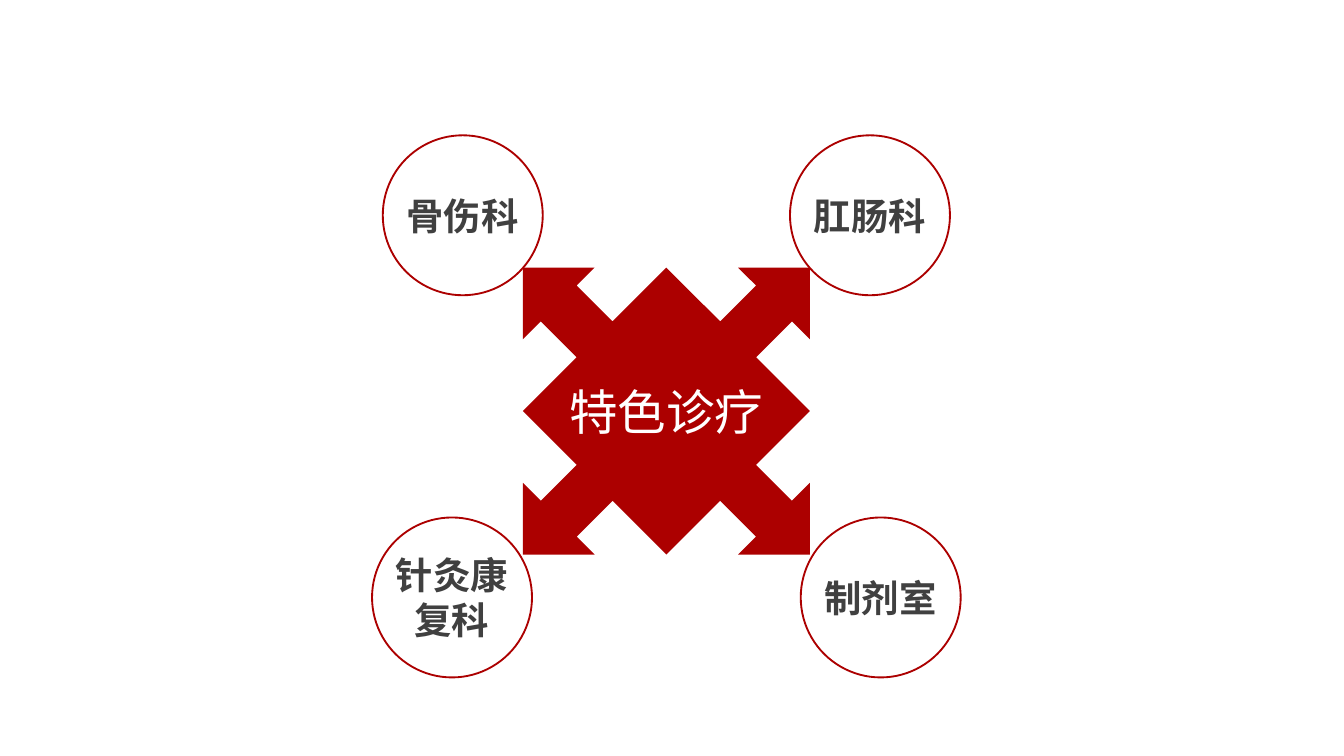
"""Build a slide with four clinic departments around a four-way arrow."""
import pptx
import pptx.dml.color
import pptx.enum.shapes
import pptx.enum.text
import pptx.oxml
import pptx.oxml.ns
import pptx.util

RED = pptx.dml.color.RGBColor(0xAC, 0x00, 0x00)
WHITE = pptx.dml.color.RGBColor(0xFF, 0xFF, 0xFF)
GREY = pptx.dml.color.RGBColor(0x40, 0x40, 0x40)
FONT = "Noto Sans CJK SC"


def write_label(shape, text, size, color, bold):
    frame = shape.text_frame
    frame.margin_left = frame.margin_right = 0
    frame.margin_top = frame.margin_bottom = 0
    frame.word_wrap = True
    frame.vertical_anchor = pptx.enum.text.MSO_ANCHOR.MIDDLE
    frame.text = text
    para = frame.paragraphs[0]
    para.alignment = pptx.enum.text.PP_ALIGN.CENTER
    span = para.runs[0]
    span.font.name = FONT
    span.font.size = pptx.util.Pt(size)
    span.font.bold = bold
    span.font.color.rgb = color
    properties = span.font._element
    east_asian = pptx.oxml.parse_xml(
        f'<a:ea {pptx.oxml.ns.nsdecls("a")} typeface="{FONT}"/>')
    properties.find(pptx.oxml.ns.qn("a:latin")).addnext(east_asian)


deck = pptx.Presentation()
deck.slide_width = pptx.util.Inches(10)
deck.slide_height = deck.slide_width * 9 // 16
page = deck.slides.add_slide(deck.slide_layouts[6])
column = deck.slide_width / 100
row = deck.slide_height / 100

center = 49.58 * column
diameter = int(11.9 * column)
departments = [
    ("肛肠科", 15.15, 17.9),
    ("骨伤科", -15.15, 17.9),
    ("制剂室", 15.95, 68.45),
    ("针灸康复科", -15.95, 68.45),
]
for name, offset, top in departments:
    left = center + offset * column - diameter / 2
    circle = page.shapes.add_shape(
        pptx.enum.shapes.MSO_SHAPE.OVAL,
        int(left), int(top * row), diameter, diameter)
    circle.shadow.inherit = False
    circle.fill.solid()
    circle.fill.fore_color.rgb = WHITE
    circle.line.color.rgb = RED
    circle.line.width = pptx.util.Pt(1)
    write_label(circle, name, 20, GREY, True)

cells = 16
arrow_width = 21.35 * column
side = [(0, 0), (4, 0), (3, 1), (5, 3), (8, 0), (11, 3), (13, 1), (12, 0)]
outline = []
for turn in range(4):
    outline += side
    side = [(cells - y, x) for x, y in side]

builder = page.shapes.build_freeform(*outline[0], scale=arrow_width / cells)
builder.add_line_segments(outline[1:], close=True)
arrow = builder.convert_to_shape(int(center - arrow_width / 2), int(35.4 * row))
arrow.shadow.inherit = False
arrow.fill.solid()
arrow.fill.fore_color.rgb = RED
arrow.line.fill.background()
write_label(arrow, "特色诊疗", 26, WHITE, False)

deck.save("out.pptx")
